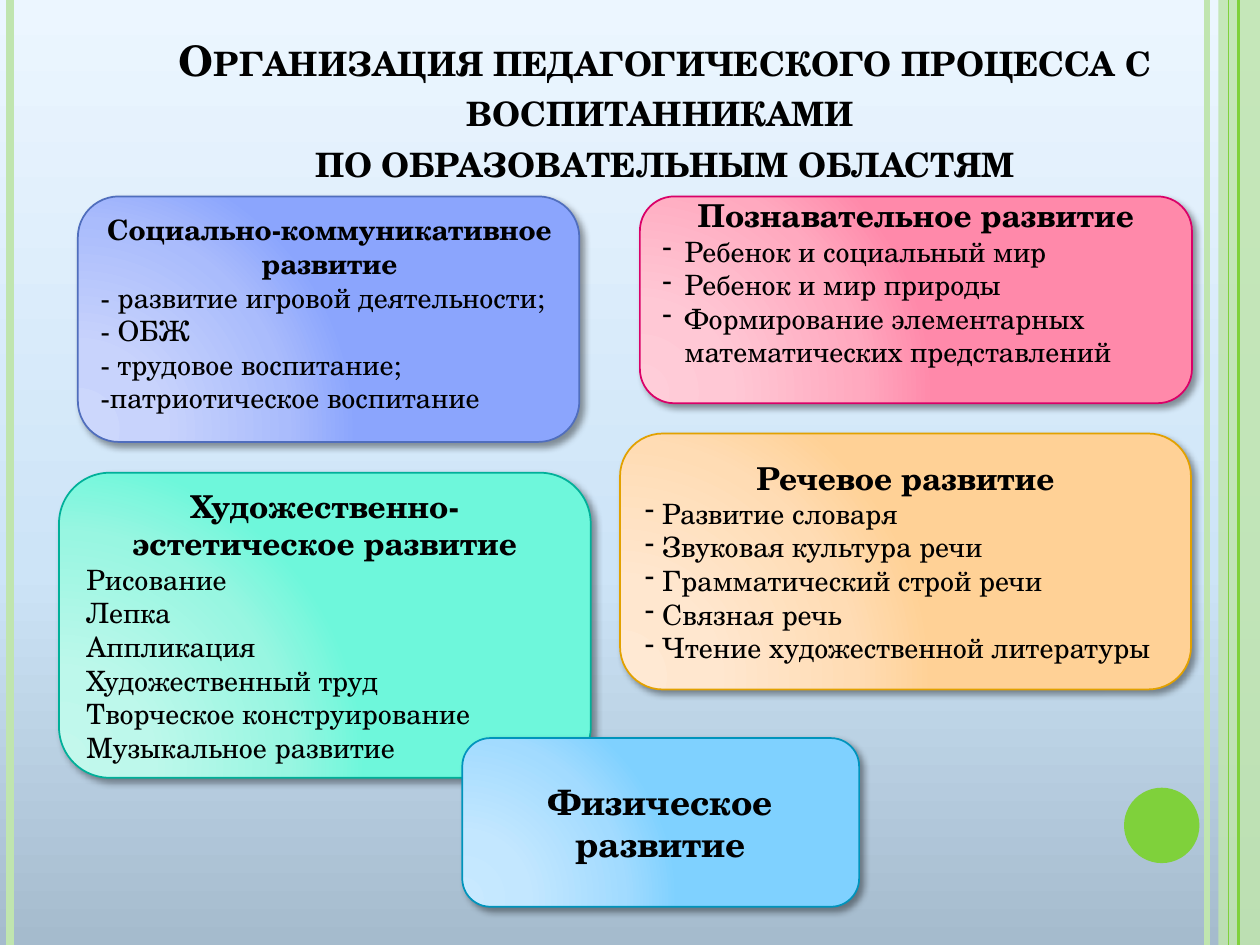
"""Build a slide of five educational areas shown as rounded cards."""
from pptx import Presentation
from pptx.dml.color import RGBColor
from pptx.enum.shapes import MSO_CONNECTOR, MSO_SHAPE
from pptx.enum.text import MSO_ANCHOR, PP_ALIGN
from pptx.oxml import parse_xml
from pptx.oxml.ns import nsdecls, qn
from pptx.util import Cm, Pt

CENTER, LEFT = PP_ALIGN.CENTER, PP_ALIGN.LEFT
TOP, MIDDLE, BOTTOM = MSO_ANCHOR.TOP, MSO_ANCHOR.MIDDLE, MSO_ANCHOR.BOTTOM
STRAIGHT = MSO_CONNECTOR.STRAIGHT
RECTANGLE, OVAL, ROUNDED = MSO_SHAPE.RECTANGLE, MSO_SHAPE.OVAL, MSO_SHAPE.ROUNDED_RECTANGLE

FONT = "TeX Gyre Schola"
BLACK = RGBColor(0x00, 0x00, 0x00)
GREEN = RGBColor(0x7F, 0xD1, 0x3B)
PALE_GREEN = RGBColor(0xC0, 0xE5, 0xAF)
SKY = [RGBColor(0xA5, 0xBB, 0xCD), RGBColor(0xCD, 0xE4, 0xF7), RGBColor(0xEC, 0xF6, 0xFF)]
BLUE_LINE = RGBColor(0x50, 0x6E, 0xBD)
BLUES = [RGBColor(0xCC, 0xD7, 0xFC), RGBColor(0xC8, 0xD3, 0xFC),
         RGBColor(0xAA, 0xBC, 0xFC), RGBColor(0x8B, 0xA5, 0xFD)]
PINK_LINE = RGBColor(0xDA, 0x00, 0x68)
PINKS = [RGBColor(0xFF, 0xCD, 0xD9), RGBColor(0xFF, 0xC8, 0xD5),
         RGBColor(0xFF, 0xA9, 0xBF), RGBColor(0xFF, 0x89, 0xAA)]
ORANGE_LINE = RGBColor(0xE2, 0xA1, 0x00)
ORANGES = [RGBColor(0xFF, 0xE9, 0xD3), RGBColor(0xFF, 0xE7, 0xCF),
           RGBColor(0xFF, 0xDC, 0xB4), RGBColor(0xFF, 0xD1, 0x96)]
TEAL_LINE = RGBColor(0x00, 0xB0, 0x99)
TEALS = [RGBColor(0xC3, 0xF8, 0xEC), RGBColor(0xBD, 0xF8, 0xEB),
         RGBColor(0x98, 0xF6, 0xE1), RGBColor(0x6E, 0xF7, 0xDB)]
CYAN_LINE = RGBColor(0x00, 0x94, 0xBC)
CYANS = [RGBColor(0xC8, 0xE9, 0xFF), RGBColor(0xC3, 0xE7, 0xFF),
         RGBColor(0xA2, 0xDB, 0xFF), RGBColor(0x7F, 0xD1, 0xFF)]

LINEAR_UP = '<a:lin ang="16200000" scaled="0"/>'
FROM_CORNER = ('<a:path path="circle"><a:fillToRect l="5000" t="100000" '
               'r="120000" b="10000"/></a:path>')
SHADOW = (f'<a:outerShdw {nsdecls("a")} blurRad="50800" dist="38100" dir="2700000" '
          'algn="tl" rotWithShape="0"><a:srgbClr val="000000">'
          '<a:alpha val="40000"/></a:srgbClr></a:outerShdw>')


def set_gradient(fill, parent, positions, colors, direction):
    fill.gradient()
    stops = "".join(f'<a:gs pos="{position * 1000}"><a:srgbClr val="{color}"/></a:gs>'
                    for position, color in zip(positions, colors))
    gradient = parse_xml(f'<a:gradFill {nsdecls("a")} rotWithShape="1">'
                         f'<a:gsLst>{stops}</a:gsLst>{direction}</a:gradFill>')
    parent.replace(parent.find(qn("a:gradFill")), gradient)


def write_text(frame, heading, size, items=(), hang=0, anchor=MIDDLE):
    frame.word_wrap = True
    frame.vertical_anchor = anchor
    frame.text = "\n".join([heading, *items])
    for index, para in enumerate(frame.paragraphs):
        para.alignment = LEFT if index else CENTER
        for span in para.runs:
            span.font.name = FONT
            span.font.size = Pt(16 if index else size)
            span.font.bold = index == 0
            span.font.color.rgb = BLACK
        if index and hang:
            properties = para._p.get_or_add_pPr()
            properties.set("marL", str(Cm(hang)))
            if not para.text.startswith("математических"):
                properties.set("indent", str(-Cm(hang)))
                properties.append(parse_xml(f'<a:buChar {nsdecls("a")} char="-"/>'))


deck = Presentation()
deck.slide_width, deck.slide_height = Cm(25.4), Cm(19.05)
page = deck.slides.add_slide(deck.slide_layouts[6])
sky_fill = page.background.fill
sky_fill.solid()
set_gradient(sky_fill, page._element.find(".//" + qn("p:bgPr")), (0, 40, 100), SKY, LINEAR_UP)

band = page.shapes.add_shape(RECTANGLE, Cm(24.56), 0, Cm(0.84), Cm(19.05))
dot = page.shapes.add_shape(OVAL, Cm(22.66), Cm(15.88), Cm(1.52), Cm(1.52))
for shape, color in ((band, PALE_GREEN), (dot, GREEN)):
    shape.shadow.inherit = False
    shape.fill.solid()
    shape.fill.fore_color.rgb = color
    shape.line.fill.background()
alpha = f'<a:alpha {nsdecls("a")} val="87000"/>'
band._element.spPr.find(".//" + qn("a:srgbClr")).append(parse_xml(alpha))

for left, width, color in ((24.33, 3, PALE_GREEN), (0.2, 4.5, PALE_GREEN),
                           (24.97, 1.5, GREEN), (24.77, 0.75, GREEN)):
    stripe = page.shapes.add_connector(STRAIGHT, Cm(left), 0, Cm(left), Cm(19.05))
    stripe.line.width = Pt(width)
    stripe.line.color.rgb = color
    stripe._element.spPr.append(parse_xml(f'<a:effectLst {nsdecls("a")}/>'))

title = page.shapes.add_textbox(Cm(1.9), Cm(0.69), Cm(23.01), Cm(3.18))
write_text(title.text_frame,
           "Организация педагогического процесса с воспитанниками \vпо образовательным областям",
           24, anchor=BOTTOM)
for span in title.text_frame.paragraphs[0].runs:
    span._r.get_or_add_rPr().set("cap", "small")

social_items = ["- развитие игровой деятельности;", "- ОБЖ", "- трудовое воспитание;",
                "-патриотическое воспитание"]
cognitive_items = ["Ребенок и социальный мир", "Ребенок и мир природы",
                   "Формирование элементарных", "математических представлений"]
speech_items = ["Развитие словаря", "Звуковая культура речи", "Грамматический строй речи",
                "Связная речь", "Чтение художественной литературы"]
art_items = ["Рисование", "Лепка", "Аппликация", "Художественный труд",
             "Творческое конструирование", "Музыкальное развитие"]
cards = [
    ((1.57, 3.96, 10.11, 4.95), BLUES, BLUE_LINE,
     "Социально-коммуникативное развитие", 16, social_items, 0),
    ((12.9, 3.96, 11.13, 4.17), PINKS, PINK_LINE,
     "Познавательное развитие", 18, cognitive_items, 0.45),
    ((12.5, 8.74, 11.51, 5.16), ORANGES, ORANGE_LINE,
     "Речевое развитие", 18, speech_items, 0.35),
    ((1.19, 9.53, 10.72, 6.15), TEALS, TEAL_LINE,
     "Художественно-эстетическое развитие", 18, art_items, 0),
    ((9.32, 14.88, 8, 3.4), CYANS, CYAN_LINE, "Физическое развитие", 20, [], 0),
]
for bounds, colors, line_color, heading, size, items, hang in cards:
    card = page.shapes.add_shape(ROUNDED, *map(Cm, bounds))
    set_gradient(card.fill, card._element.spPr, (0, 30, 75, 100), colors, FROM_CORNER)
    card.line.color.rgb = line_color
    card.line.width = Pt(1)
    card.shadow.inherit = False
    card._element.spPr.find(qn("a:effectLst")).append(parse_xml(SHADOW))
    if items is social_items:
        box = page.shapes.add_textbox(Cm(1.78), Cm(4.17), Cm(9.73), Cm(4.37))
        write_text(box.text_frame, heading, size, items, anchor=TOP)
    else:
        write_text(card.text_frame, heading, size, items, hang)
    if items is cognitive_items:
        card.text_frame.margin_top = 0
        card.text_frame.margin_bottom = Cm(0.7)

deck.save("out.pptx")
